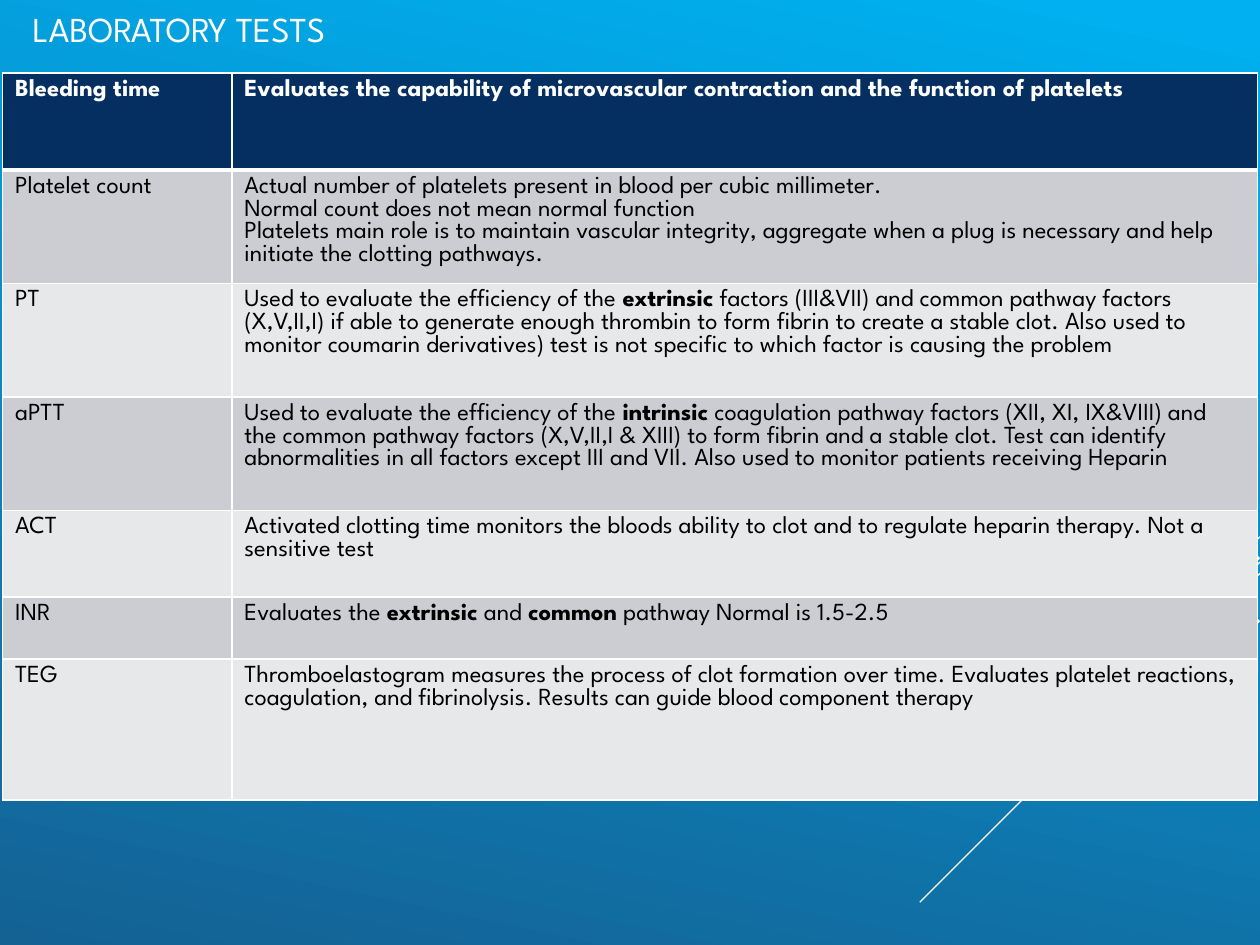
from lxml import etree
from pptx import Presentation
from pptx.dml.color import RGBColor
from pptx.enum import shapes, text
from pptx.oxml import ns
from pptx.util import Inches, Pt

FONT = "League Spartan"
WHITE, BLACK, NAVY = "FFFFFF", "000000", "052F61"
BANDS = ["E7E8EA", "CCCDD2"]

# Text between double asterisks is bold.
TESTS = [
    (0.77, "Bleeding time",
     ["**Evaluates the capability of microvascular contraction and the function of platelets**"]),
    (0.9, "Platelet count",
     ["Actual number of platelets present in blood per cubic millimeter.",
      "Normal count does not mean normal function",
      "Platelets main role is to maintain vascular integrity, aggregate when a plug is "
      "necessary and help initiate the clotting pathways."]),
    (0.9, "PT",
     ["Used to evaluate the efficiency of the **extrinsic** factors (III&VII) and common "
      "pathway factors (X,V,II,I) if able to generate enough thrombin to form fibrin to "
      "create a stable clot. Also used to monitor coumarin derivatives) test is not "
      "specific to which factor is causing the problem"]),
    (0.9, "aPTT",
     ["Used to evaluate the efficiency of the **intrinsic** coagulation pathway factors "
      "(XII, XI, IX&VIII) and the common pathway factors (X,V,II,I & XIII) to form fibrin "
      "and a stable clot. Test can identify abnormalities in all factors except III and "
      "VII. Also used to monitor patients receiving Heparin"]),
    (0.69, "ACT",
     ["Activated clotting time monitors the bloods ability to clot and to regulate heparin "
      "therapy. Not a sensitive test"]),
    (0.49, "INR",
     ["Evaluates the **extrinsic** and **common** pathway Normal is 1.5-2.5"]),
    (1.12, "TEG",
     ["Thromboelastogram measures the process of clot formation over time. Evaluates "
      "platelet reactions, coagulation, and fibrinolysis. Results can guide blood "
      "component therapy"]),
]


def rgb(value):
    return RGBColor.from_string(value)


def set_font(r, color, **values):
    r.font.color.rgb = rgb(color)
    for name, value in {"name": FONT, **values}.items():
        setattr(r.font, name, value)


def add_background(slide):
    fill = slide.background.fill
    fill.gradient()
    fill.gradient_angle = 360 - 102
    for stop, (position, color) in zip(fill.gradient_stops,
                                       [(0.03, "00B0F0"), (1, "146194")]):
        stop.position = position
        stop.color.rgb = rgb(color)


def add_rays(slide, left, top):
    """Diagonal lines at 45 degrees: start x, start y, run and width."""
    rays = [(2.7, 0, 0.83, 0.75), (2.7, 0.2, 2.7, 0.75), (2.7, 0.29, 1.72, 0.75),
            (2.69, 0.16, 1.57, 2.25), (2.69, 0.66, 1.14, 2.25)]
    for x, y, run, width in rays:
        x, y = left + x, top + y
        line = slide.shapes.add_connector(
            shapes.MSO_CONNECTOR.STRAIGHT,
            Inches(x), Inches(y), Inches(x - run), Inches(y + run))
        line.line.color.rgb = rgb(WHITE)
        line.line.width = Pt(width)
        etree.SubElement(line._element.spPr, ns.qn("a:effectLst"))


def add_title(slide, left, top, width, height):
    title = slide.shapes.title
    box = {"left": left, "top": top, "width": width, "height": height}
    for name, value in box.items():
        setattr(title, name, Inches(value))
    tf = title.text_frame
    tf.vertical_anchor = text.MSO_ANCHOR.MIDDLE
    p = tf.paragraphs[0]
    p.alignment = text.PP_ALIGN.LEFT
    r = p.add_run()
    r.text = "LABORATORY TESTS"
    set_font(r, WHITE, size=Pt(20))


def set_borders(cell, top=1, bottom=1):
    tcPr = cell._tc.get_or_add_tcPr()
    for i, (side, width) in enumerate(zip("LRTB", (1, 1, top, bottom))):
        ln = etree.Element(ns.qn(f"a:ln{side}"), w=str(Pt(width)))
        fill = etree.SubElement(ln, ns.qn("a:solidFill"))
        etree.SubElement(fill, ns.qn("a:srgbClr"), val=WHITE)
        tcPr.insert(i, ln)


def fill_cell(cell, paragraphs, fill, color):
    cell.fill.solid()
    cell.fill.fore_color.rgb = rgb(fill)
    tf = cell.text_frame
    for i, line in enumerate(paragraphs):
        p = tf.add_paragraph() if i else tf.paragraphs[0]
        for j, part in enumerate(line.split("**")):
            if part:
                r = p.add_run()
                r.text = part
                set_font(r, color, size=Pt(14), bold=j % 2 == 1)


def add_tests_table(slide, left, top, widths):
    height = sum(row[0] for row in TESTS)
    table = slide.shapes.add_table(
        len(TESTS), len(widths), Inches(left), Inches(top),
        Inches(sum(widths)), Inches(height)).table
    for column, width in zip(table.columns, widths):
        column.width = Inches(width)
    for i, (row_height, name, description) in enumerate(TESTS):
        table.rows[i].height = Inches(row_height)
        header = i == 0
        fill, color = (NAVY, WHITE) if header else (BANDS[i % 2], BLACK)
        label = f"**{name}**" if header else name
        for j, paragraphs in enumerate(([label], description)):
            cell = table.cell(i, j)
            fill_cell(cell, paragraphs, fill, color)
            set_borders(cell, top=3 if i == 1 else 1, bottom=3 if header else 1)


def main():
    prs = Presentation()
    prs.slide_width, prs.slide_height = Inches(10), Inches(7.5)
    slide = prs.slides.add_slide(prs.slide_layouts[5])
    add_background(slide)
    add_rays(slide, 7.3, 4.26)
    add_title(slide, 0.16, -0.12, 8.29, 0.69)
    add_tests_table(slide, 0.02, 0.58, [1.82, 8.14])
    prs.save("out.pptx")


if __name__ == "__main__":
    main()
